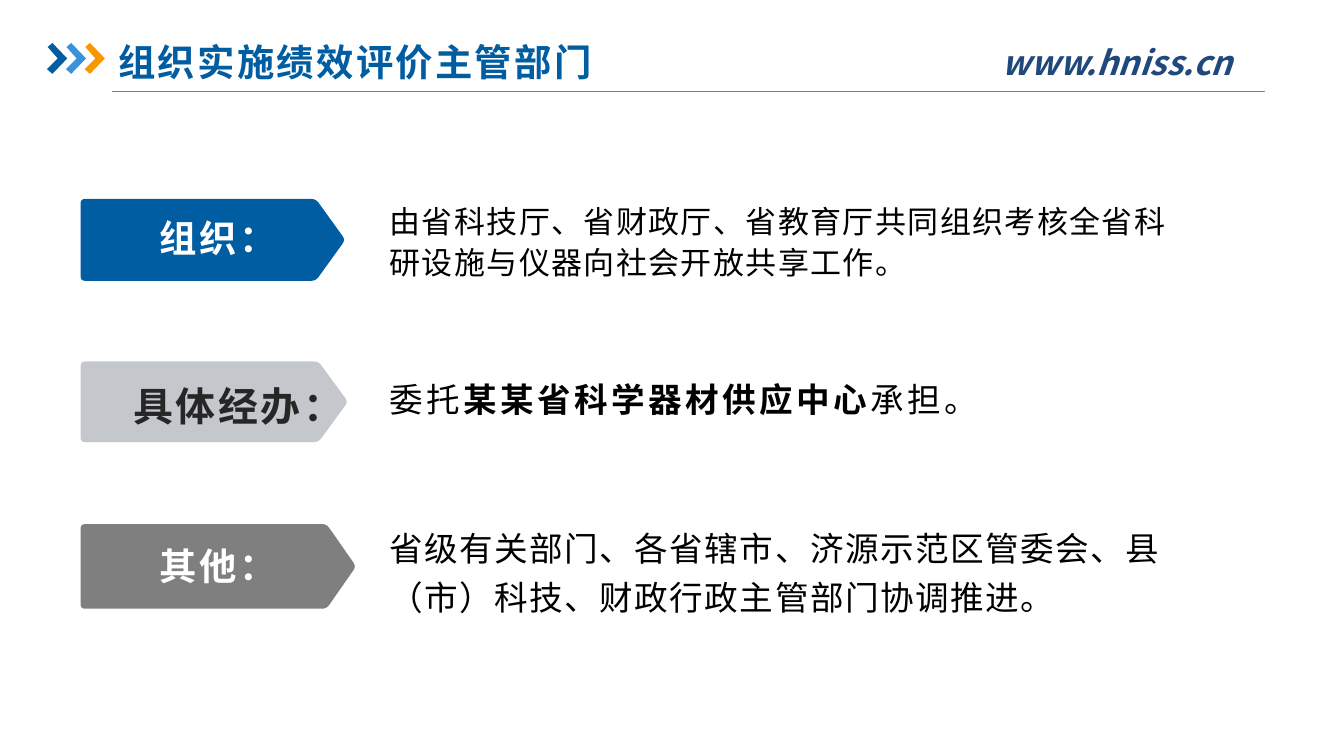
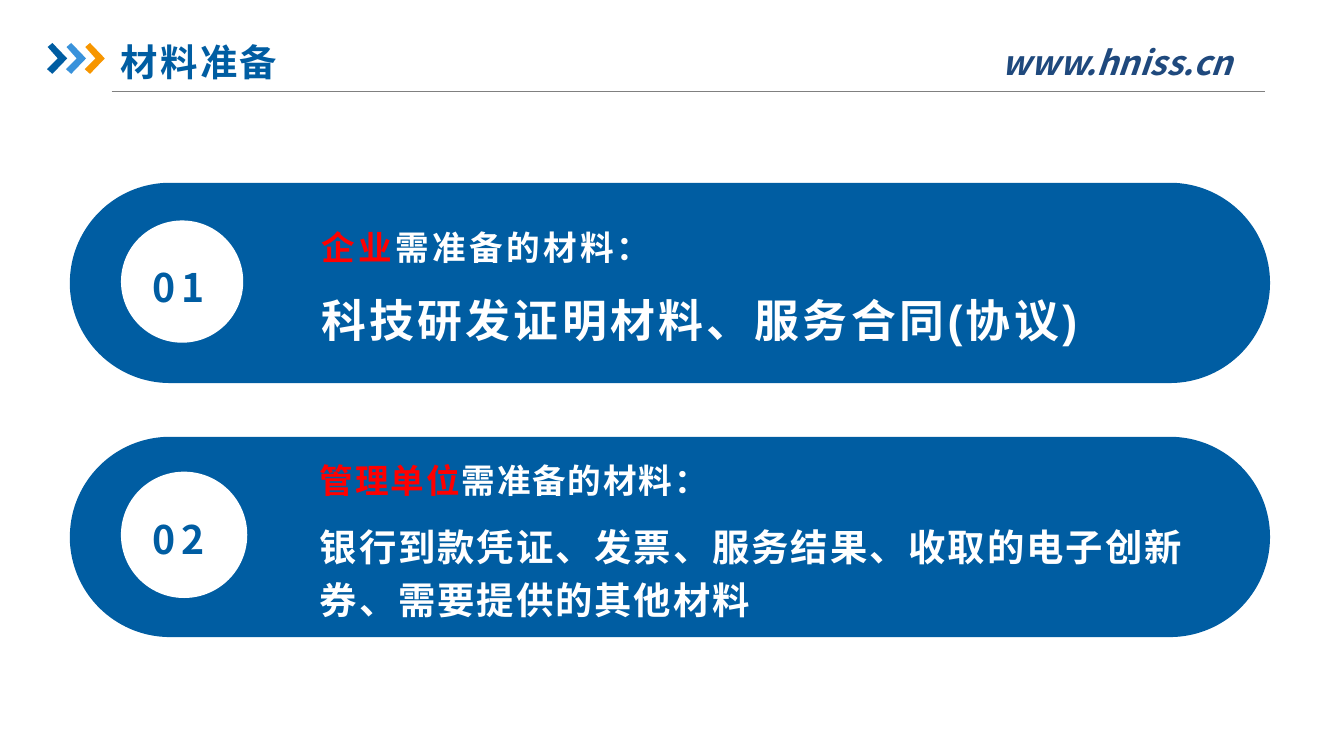
import collections
import math

import pptx
import pptx.dml.color
import pptx.enum.shapes
import pptx.enum.text
import pptx.oxml.ns
import pptx.util
from lxml import etree

# Grid: 100 columns across the slide, 56.25 rows down it
COLUMNS, ROWS = 100, 56.25
CELL = pptx.util.Inches(10) // COLUMNS

COLOURS = {
    "blue": "005DA2",
    "sky": "3992DB",
    "orange": "F79600",
    "navy": "1F497D",
    "rule": "808080",
    "silver": "C4C7CB",
    "grey": "7F7F7F",
    "ink": "262626",
    "black": "000000",
    "white": "FFFFFF",
    "red": "FF0000",
}
CJK, LATIN = "Noto Sans CJK SC", "Arial"
ALIGN = pptx.enum.text.PP_ALIGN
ANCHOR = pptx.enum.text.MSO_ANCHOR
SHAPE = pptx.enum.shapes.MSO_SHAPE

# Insets in cells: across, down
WIDE, SNUG, TIGHT = (1, 0.5), (0.7, 0.4), (0.5, 0.2)


class Box(collections.namedtuple("Box", "left top width height")):
    """A region measured in grid cells."""

    def inner(self, left, top, width, height):
        return Box(self.left + left, self.top + top, width, height)

    def emu(self):
        return [cells(value) for value in self]


Span = collections.namedtuple(
    "Span", "text size colour font bold italic spacing",
    defaults=(CJK, False, False, 0))
Para = collections.namedtuple(
    "Para", "spans align line after", defaults=(ALIGN.LEFT, 1.0, 0))


def cells(value):
    return round(value * CELL)


def rgb(name):
    return pptx.dml.color.RGBColor.from_string(COLOURS[name])


def paint(shape, colour):
    shape.shadow.inherit = False
    shape.fill.solid()
    shape.fill.fore_color.rgb = rgb(colour)
    shape.line.fill.background()


def add_preset(page, kind, box, colour):
    shape = page.shapes.add_shape(kind, *box.emu())
    paint(shape, colour)
    return shape


def add_outline(page, points, colour):
    points = [(cells(x), cells(y)) for x, y in points]
    builder = page.shapes.build_freeform(*points[0])
    builder.add_line_segments(points[1:], close=True)
    paint(builder.convert_to_shape(), colour)


def add_text(page, box, paras, insets=WIDE, anchor=ANCHOR.TOP):
    frame = page.shapes.add_textbox(*box.emu()).text_frame
    frame.word_wrap = True
    frame.vertical_anchor = anchor
    frame.margin_left = frame.margin_right = cells(insets[0])
    frame.margin_top = frame.margin_bottom = cells(insets[1])
    for index, para in enumerate(paras):
        line = frame.add_paragraph() if index else frame.paragraphs[0]
        line.alignment = para.align
        line.line_spacing = para.line
        line.space_after = pptx.util.Pt(para.after)
        for span in para.spans:
            add_span(line, span)


def add_span(line, span):
    run = line.add_run()
    run.text = span.text
    font = run.font
    font.size = pptx.util.Pt(span.size)
    font.bold, font.italic = span.bold, span.italic
    font.color.rgb = rgb(span.colour)
    font.name = span.font
    properties = run._r.get_or_add_rPr()
    properties.set("spc", str(round(span.spacing * 100)))
    east_asian = etree.SubElement(properties, pptx.oxml.ns.qn("a:ea"))
    east_asian.set("typeface", CJK)


def rounded(corners, radius, steps=4):
    """Replace each corner of a polygon by a short curve."""
    points = []
    for index, corner in enumerate(corners):
        ends = []
        for other in (corners[index - 1], corners[(index + 1) % len(corners)]):
            share = radius / math.dist(corner, other)
            ends.append([c + (o - c) * share for c, o in zip(corner, other)])
        for step in range(steps + 1):
            t = step / steps
            points.append([
                (1 - t) ** 2 * a + 2 * t * (1 - t) * c + t ** 2 * b
                for a, c, b in zip(ends[0], corner, ends[1])])
    return points


def add_header(page, box, title, title_left):
    # Rule under the title
    rule = page.shapes.add_connector(
        pptx.enum.shapes.MSO_CONNECTOR.STRAIGHT,
        cells(box.left + 4.8), cells(box.top + 4.7),
        cells(box.left + 90.6), cells(box.top + 4.7))
    rule.line.color.rgb = rgb("rule")
    rule.line.width = pptx.util.Pt(0.75)
    etree.SubElement(rule._element.spPr, pptx.oxml.ns.qn("a:effectLst"))

    # Three chevrons
    chevron = [(0.05, 0.3), (0.4, 0), (1.5, 1.15), (0.4, 2.3), (0, 1.95), (0.8, 1.15)]
    for index, colour in enumerate(("blue", "sky", "orange")):
        left, top = box.left + 1.4 * index, box.top + 1.1
        add_outline(page, [(left + x, top + y) for x, y in chevron], colour)

    # Web address and title
    address = Span("www.hniss.cn", 18, "navy", bold=True, italic=True)
    add_text(page, box.inner(67.8, 0.5, 23.6, 4), [Para([address], ALIGN.CENTER)])
    heading = Span(title, 20, "blue", bold=True, spacing=1.2)
    add_text(page, box.inner(title_left, 0, 90 - title_left, 5),
             [Para([heading])], TIGHT, ANCHOR.MIDDLE)


def add_duty(page, box, colour, label, label_top, body, body_top):
    # Pointed tag
    shoulder = box.width - 2.1
    corners = [(0, 0), (shoulder, 0), (box.width + 0.1, box.height / 2),
               (shoulder, box.height), (0, box.height)]
    outline = [(box.left + x, box.top + y) for x, y in rounded(corners, 0.35)]
    add_outline(page, outline, colour)

    # Description and label
    add_text(page, box.inner(22, body_top, 60.9, 7.5), [body])
    add_text(page, box.inner(2.3, label_top, 15.9, 5.6),
             [Para([label], ALIGN.CENTER)])


def add_duties(page, box):
    def label(text, colour="white", size=20, spacing=1.5):
        return Span(text, size, colour, LATIN, True, spacing=spacing)

    def body(text, size=18, spacing=0.8, bold=False):
        return Span(text, size, "black", bold=bold, spacing=spacing)

    # Width, height, tag colour, label and its top, description and its top
    duties = [
        (19.6, 6.1, "blue", label("组织："), 0.7,
         Para([body("由省科技厅、省财政厅、省教育厅共同组织考核全省科研设施与仪器向社会开放共享工作。", 16.6)],
              line=1.1, after=8), -0.5),
        (19.8, 6, "silver", label("具体经办：", "ink", 21.4, 1.4), 1,
         Para([body("委托", spacing=1.8),
               body("某某省科学器材供应中心", spacing=1.8, bold=True),
               body("承担。", spacing=1.8)], after=8), 0.8),
        (20.4, 6.3, "grey", label("其他："), 0.9,
         Para([body("省级有关部门、各省辖市、济源示范区管委会、县（市）科技、财政行政主管部门协调推进。")],
              line=1.2, after=8), -0.8),
    ]
    pitch = box.height / len(duties)
    for index, (width, height, *content) in enumerate(duties):
        add_duty(page, box.inner(0, index * pitch, width, height), *content)


def add_material(page, box, number, disc, number_top, text_box, paras):
    # Pill and disc
    pill = add_preset(page, SHAPE.ROUNDED_RECTANGLE, box, "blue")
    pill.adjustments[0] = 0.5
    add_preset(page, SHAPE.OVAL, box.inner(3.8, disc[0], disc[1], disc[1]), "white")

    # Requirements and number
    add_text(page, box.inner(*text_box), paras, SNUG)
    digits = Span(number, 21, "blue", bold=True, spacing=3)
    add_text(page, box.inner(3.8, number_top, 8.6, 7.8),
             [Para([digits], ALIGN.CENTER, 1.3)], SNUG, ANCHOR.MIDDLE)


def add_materials(page, box):
    # Disc top and size, number top, text box, who, spacing, what, size
    materials = [
        ((2.8, 9.1), 3.3, (18, 2.3, 60.2, 11.4),
         "企业", 1.8, "科技研发证明材料、服务合同(协议)", 24),
        ((2.6, 9.4), 3.2, (17.9, 0.7, 68.1, 11.4),
         "管理单位", 1, "银行到款凭证、发票、服务结果、收取的电子创新券、需要提供的其他材料", 20),
    ]
    pill_height = 14.9
    pitch = box.height - pill_height
    for index, (disc, number_top, text_box, who, spacing, what, size) in enumerate(materials):
        def span(text, points, colour):
            return Span(text, points, colour, LATIN, True, spacing=spacing)

        paras = [
            Para([span(who, 18, "red"), span("需准备的材料：", 18, "white")],
                 line=1.2, after=8),
            Para([span(what, size, "white")], line=1.2, after=8),
        ]
        add_material(page, box.inner(0, index * pitch, box.width, pill_height),
                     f"{index + 1:02}", disc, number_top, text_box, paras)


def main():
    deck = pptx.Presentation()
    deck.slide_width, deck.slide_height = cells(COLUMNS), cells(ROWS)
    header = Box(3.5, 2.1, 91.4, 5)
    pages = [
        ("组织实施绩效评价主管部门", 4.8, add_duties, Box(6, 14.8, 83, 36.3)),
        ("材料准备", 5, add_materials, Box(5.2, 13.6, 89.3, 33.8)),
    ]
    for title, title_left, add_content, box in pages:
        page = deck.slides.add_slide(deck.slide_layouts[6])
        add_header(page, header, title, title_left)
        add_content(page, box)
    deck.save("out.pptx")


if __name__ == "__main__":
    main()
